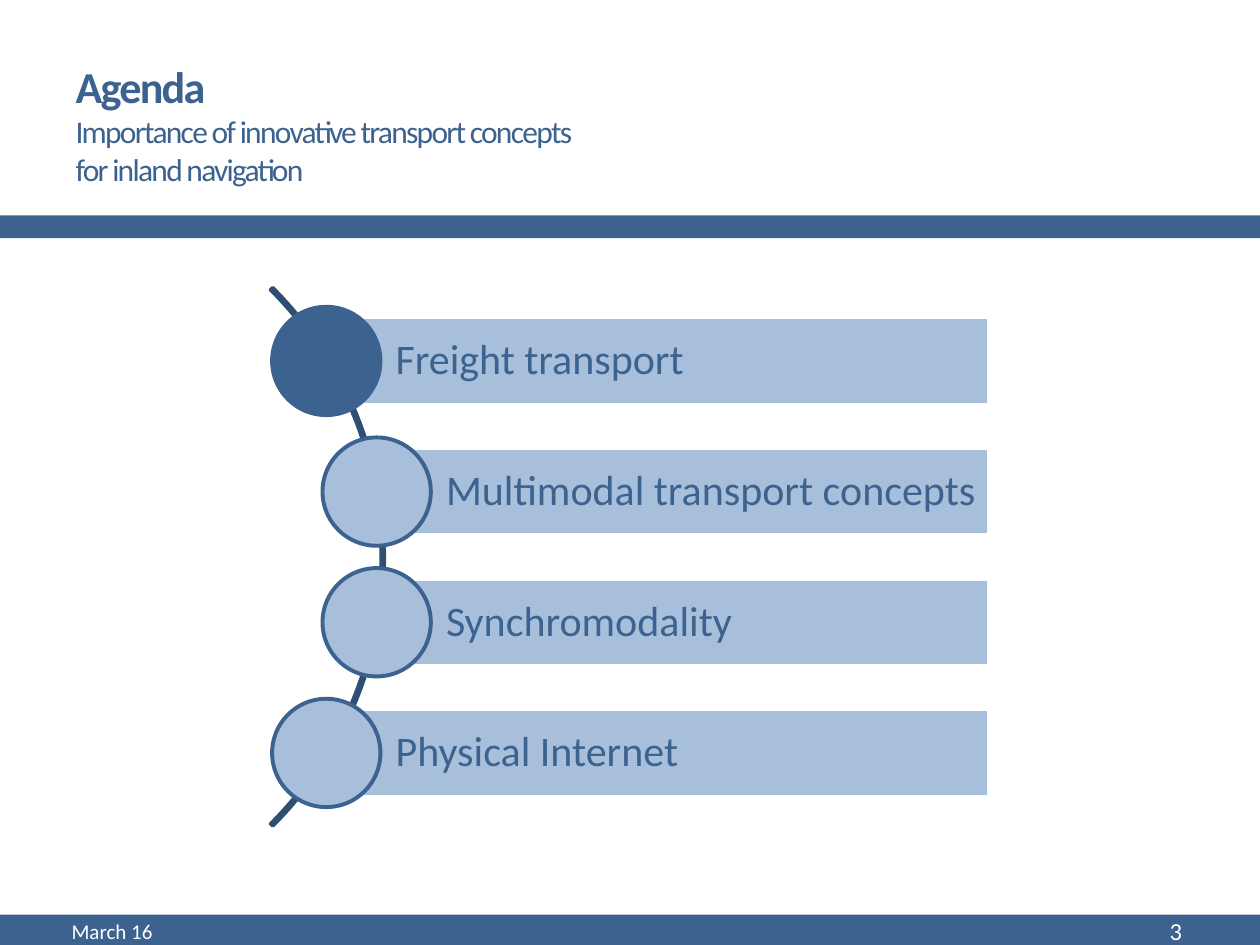
import pptx
import pptx.util
import pptx.dml.color
import pptx.enum.shapes
import pptx.enum.text

Inches = pptx.util.Inches
Pt = pptx.util.Pt
SHAPE = pptx.enum.shapes.MSO_SHAPE
ALIGN = pptx.enum.text.PP_ALIGN
MIDDLE = pptx.enum.text.MSO_ANCHOR.MIDDLE

BLUE, LIGHT, DARK, WHITE = "3C628F", "A8BFDB", "304E73", "FFFFFF"


def rgb(color):
    return pptx.dml.color.RGBColor.from_string(color)


def add_shape(slide, kind, x, y, w, h, fill=None, line=None, width=2.08):
    sp = slide.shapes.add_shape(kind, Inches(x), Inches(y), Inches(w), Inches(h))
    sp.shadow.inherit = False
    if fill:
        sp.fill.solid()
        sp.fill.fore_color.rgb = rgb(fill)
    else:
        sp.fill.background()
    if line:
        sp.line.color.rgb = rgb(line)
        sp.line.width = Pt(width)
    else:
        sp.line.fill.background()
    return sp


def set_frame(sp, left=0.1, top=0.05, right=0.1, bottom=0.05):
    tf = sp.text_frame
    tf.word_wrap = True
    tf.auto_size = pptx.enum.text.MSO_AUTO_SIZE.NONE
    tf.vertical_anchor = MIDDLE
    tf.margin_left, tf.margin_top = Inches(left), Inches(top)
    tf.margin_right, tf.margin_bottom = Inches(right), Inches(bottom)
    return tf


def add_text(p, text, size=24, color=BLUE, bold=False, align=ALIGN.LEFT,
             line_spacing=None, tracking=None):
    """Append text to a paragraph; each newline becomes a line break."""
    p.alignment = align
    if line_spacing:
        p.line_spacing = line_spacing
    for i, part in enumerate(text.split("\n")):
        if i:
            p.add_line_break()
        r = p.add_run()
        r.text = part
        r.font.name = "Calibri"
        r.font.size = Pt(size)
        r.font.bold = bold
        r.font.color.rgb = rgb(color)
        if tracking:
            r.font._element.set("spc", str(tracking * 100))


def add_title(slide, heading, subtitle):
    sp = slide.shapes.title
    sp.left, sp.top = Inches(0.5), Inches(0.44)
    sp.width, sp.height = Inches(5.21), Inches(1.08)
    p = set_frame(sp).paragraphs[0]
    add_text(p, heading, size=25.2, bold=True, tracking=-1)
    p.add_line_break()
    add_text(p, subtitle, size=18, tracking=-1)


def add_agenda_item(slide, text, x, y, dot_fill):
    """Bar with its left edge under the middle of a circle."""
    bar_h, dot, right = 0.69, 0.86, 7.85
    bar = add_shape(slide, SHAPE.RECTANGLE, x, y, right - x, bar_h, LIGHT, WHITE)
    p = set_frame(bar, 0.55, 0.07, 0.07, 0.07).paragraphs[0]
    add_text(p, text, line_spacing=0.9)
    add_shape(slide, SHAPE.OVAL, x - dot / 2, y + (bar_h - dot) / 2, dot, dot,
              dot_fill, BLUE, 2.25)


def add_footer(slide, text, x, w, **fmt):
    sp = slide.shapes.add_textbox(Inches(x), Inches(7.21), Inches(w), Inches(0.36))
    add_text(set_frame(sp).paragraphs[0], text, color=WHITE, **fmt)


def main():
    prs = pptx.Presentation()
    prs.slide_width, prs.slide_height = Inches(10), Inches(7.5)
    s = prs.slides.add_slide(prs.slide_layouts[5])

    # Header and footer bands
    add_shape(s, SHAPE.RECTANGLE, -0.04, 7.26, 10.16, 0.5, BLUE)
    add_shape(s, SHAPE.RECTANGLE, -0.02, 1.71, 10.12, 0.18, BLUE)
    add_title(s, "Agenda",
              "Importance of innovative transport concepts\nfor inland navigation")

    # Quarter arc from 315 to 45 degrees behind the items
    arc = add_shape(s, SHAPE.BLOCK_ARC, -2.99, 1.4, 6.04, 6.04, line=DARK)
    for i, value in enumerate((189, 27, 0.004)):
        arc.adjustments[i] = value

    # Agenda items; the first is the current one
    items = [("Freight transport", 2.59), ("Multimodal transport concepts", 2.99),
             ("Synchromodality", 2.99), ("Physical Internet", 2.59)]
    for i, (text, x) in enumerate(items):
        add_agenda_item(s, text, x, 2.52 + i * 1.037, LIGHT if i else BLUE)

    # Date and page number
    add_footer(s, "March 16", 0.47, 3.17, size=12)
    add_footer(s, "3", 8.31, 1.17, size=14, align=ALIGN.RIGHT)

    prs.save("out.pptx")


if __name__ == "__main__":
    main()
